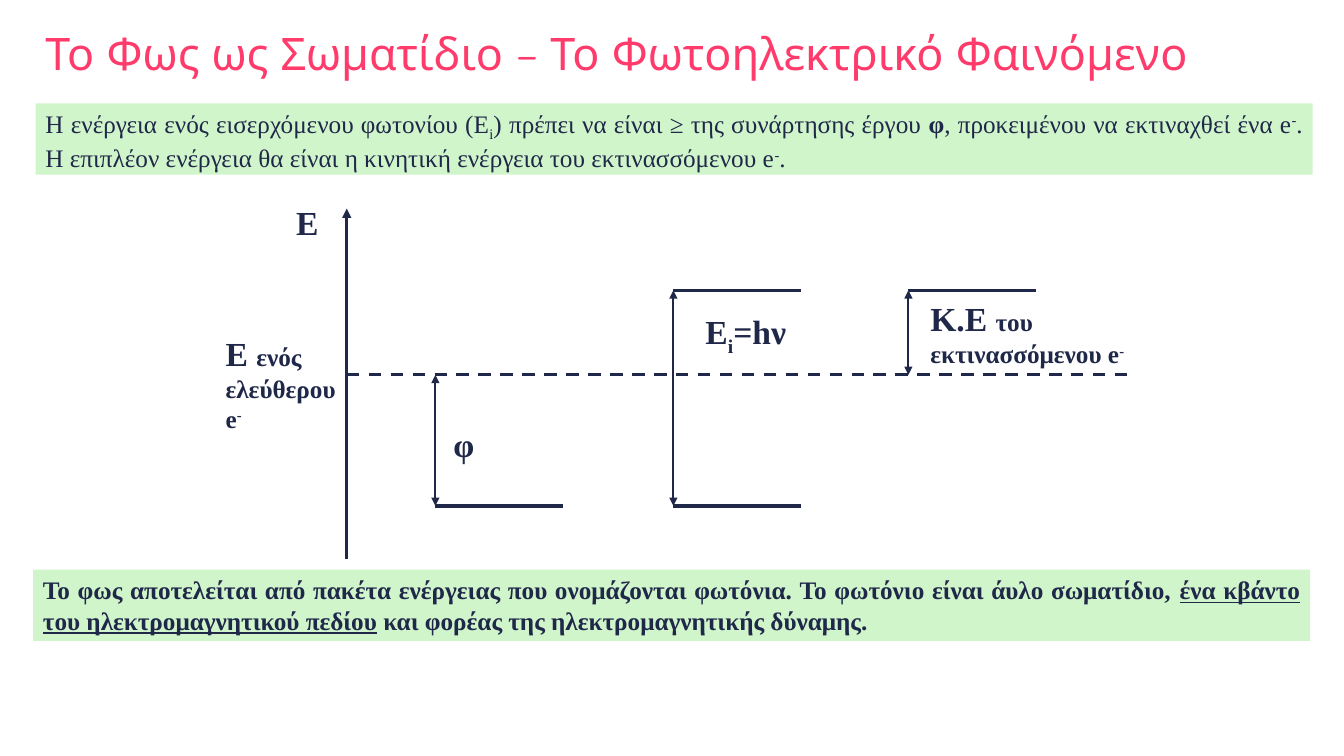
from pptx import Presentation
from pptx.dml.color import RGBColor
from pptx.enum.dml import MSO_LINE as Dash
from pptx.enum.shapes import MSO_CONNECTOR as Link, MSO_SHAPE as Shape
from pptx.enum.text import MSO_ANCHOR as Anchor, MSO_AUTO_SIZE as Fit, PP_ALIGN as Align
from pptx.oxml.ns import qn
from pptx.util import Pt
from lxml.etree import SubElement

hues = {"ink": "202849", "pink": "FF3B6B", "mint": "D1F5CB"}
color = {name: RGBColor.from_string(code) for name, code in hues.items()}


def write(para, runs, **base):
    for text, form in runs:
        form = {"name": "Times New Roman", "size": Pt(18), **base, **form}
        shift = form.pop("shift", 0)
        for i, line in enumerate(text.split("\n")):
            if i:
                para.add_line_break()
            run = para.add_run()
            run.text = line
            for key, value in form.items():
                setattr(run.font, key, value)
            run.font.color.rgb = color["ink"]
            if shift:
                run._r.get_or_add_rPr().set("baseline", str(shift * 1000))


def draw(shapes, x1, y1, x2, y2, width=2.25, ends=(), dash=None):
    link = shapes.add_connector(Link.STRAIGHT, Pt(x1), Pt(y1), Pt(x2), Pt(y2))
    link.line.color.rgb = color["ink"]
    link.line.width = Pt(width)
    if dash:
        link.line.dash_style = dash
    for end in ends:
        SubElement(link.line._ln, qn("a:" + end), type="triangle")
    SubElement(link._element.spPr, qn("a:effectLst"))


deck = Presentation()
deck.slide_width, deck.slide_height = Pt(960), Pt(540)
slide = deck.slides.add_slide(deck.slide_layouts[5])

title = slide.shapes.title
title.left, title.top, title.width, title.height = Pt(25.2), Pt(13.7), Pt(910.8), Pt(52.6)
title.text = "Το Φως ως Σωματίδιο – Το Φωτοηλεκτρικό Φαινόμενο"
frame = title.text_frame
frame.vertical_anchor = Anchor.MIDDLE
frame.auto_size = Fit.NONE
para = frame.paragraphs[0]
para.alignment = Align.LEFT
para.line_spacing = 0.9
para.font.name = "Quicksand"
para.font.size = Pt(32)
para.font.color.rgb = color["pink"]

graph = slide.shapes.add_group_shape().shapes
axis, high, free, low = 247.7, 207.4, 267.8, 361.4
phi, light, speed, span = 311, 481, 648.9, 91.4

draw(graph, axis, 399.6, axis, 149, ends=["tailEnd"])
draw(graph, axis, free, 805, free, dash=Dash.DASH)
for x, y in [(phi, low), (light, low), (light, high), (speed, high)]:
    draw(graph, x, y, x + span, y)
for x, top, end in [(phi, free, low), (light, high, low), (speed, high, free)]:
    draw(graph, x, top, x, end, 1.5, ["headEnd", "tailEnd"])

big, sub, sup = {"size": Pt(24)}, {"shift": -25}, {"shift": 30}
labels = [
    (204.5, 140.4, 31, 36, [("Ε", big)]),
    (154.1, 234, 98.6, 80, [("Ε ", big), ("ενός\nελεύθερου\ne", {}), ("-", sup)]),
    (316.8, 299.5, 29.5, 36, [("φ", big)]),
    (496.8, 218.9, 75.6, 36, [("Ε", big), ("i", {**big, **sub}), ("=hν", big)]),
    (657.4, 209.5, 154.8, 58.3, [("Κ.Ε ", big), ("του\nεκτινασσόμενου e", {}), ("-", sup)]),
]
for x, y, wide, tall, runs in labels:
    frame = graph.add_textbox(Pt(x), Pt(y), Pt(wide), Pt(tall)).text_frame
    frame.word_wrap = False
    frame.auto_size = Fit.SHAPE_TO_FIT_TEXT
    write(frame.paragraphs[0], runs, bold=True)

bold = {"bold": True}
notes = [
    (25.4, 73.8, [
        ("Η ενέργεια ενός εισερχόμενου φωτονίου (E", {}), ("i", sub),
        (") πρέπει να είναι ≥ της συνάρτησης έργου ", {}), ("φ", bold),
        (", προκειμένου να εκτιναχθεί ένα e", {}), ("-", sup),
        (". Η επιπλέον ενέργεια θα είναι η κινητική ενέργεια του εκτινασσόμενου e", {}),
        ("-", sup), (".", {}),
    ]),
    (23.6, 406.9, [
        ("Το φως αποτελείται από πακέτα ενέργειας που ονομάζονται φωτόνια. "
         "To φωτόνιο είναι άυλο σωματίδιο, ", bold),
        ("ένα κβάντο του ηλεκτρομαγνητικού πεδίου", {**bold, "underline": True}),
        (" και φορέας της ηλεκτρομαγνητικής δύναμης.", bold),
    ]),
]
for x, y, runs in notes:
    box = slide.shapes.add_shape(Shape.RECTANGLE, Pt(x), Pt(y), Pt(912.2), Pt(50.9))
    box.shadow.inherit = False
    box.fill.solid()
    box.fill.fore_color.rgb = color["mint"]
    box.line.fill.background()
    frame = box.text_frame
    frame.word_wrap = True
    frame.auto_size = Fit.SHAPE_TO_FIT_TEXT
    frame.vertical_anchor = Anchor.TOP
    para = frame.paragraphs[0]
    para.alignment = Align.JUSTIFY
    write(para, runs)

deck.save("out.pptx")
